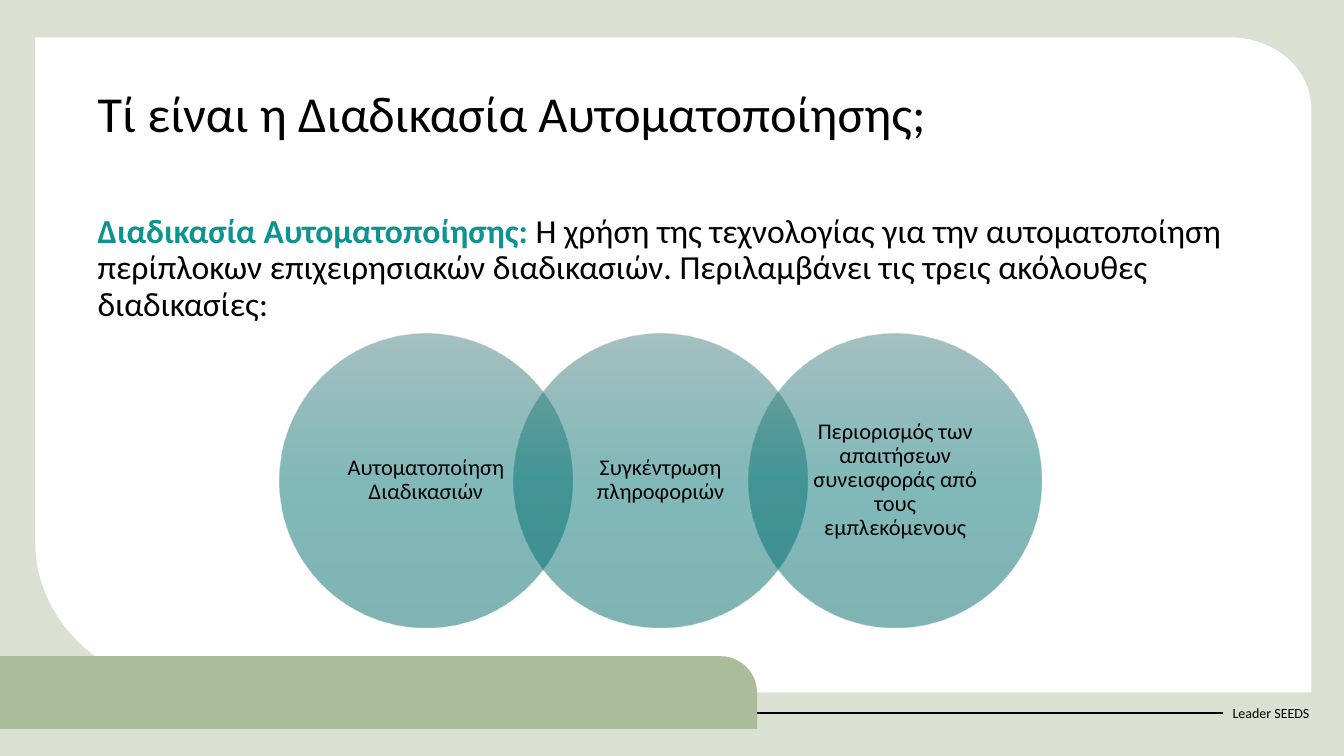
import copy
import math
from lxml import etree
from pptx import Presentation
from pptx import util as u
from pptx.dml.color import RGBColor
from pptx.enum import shapes, text
from pptx.oxml import ns

PALE = RGBColor(0xDA, 0xE0, 0xD2)
SAGE = RGBColor(0xAA, 0xBC, 0x99)
WHITE = RGBColor(0xFF, 0xFF, 0xFF)
BLACK = RGBColor(0, 0, 0)
TEAL = RGBColor(0x0D, 0x93, 0x90)
CIRCLE_STOPS = [
    (0, RGBColor(0x4B, 0x80, 0x81)),
    (0.5, RGBColor(0x03, 0x72, 0x73)),
    (1, RGBColor(0x00, 0x68, 0x69)),
]
CELL = u.Inches(0.1)
COLUMNS, ROWS = 133.33, 75

deck = Presentation()
deck.slide_width = int(COLUMNS * CELL)
deck.slide_height = int(ROWS * CELL)
page = deck.slides.add_slide(deck.slide_layouts[6])


def grid(*cells):
    return [int(cell * CELL) for cell in cells]


def add_text(area, spans, size, align=text.PP_ALIGN.LEFT,
             anchor=text.MSO_ANCHOR.TOP, spacing=0.9, inset=(1, 0.5)):
    box = page.shapes.add_textbox(*grid(*area))
    frame = box.text_frame
    frame.word_wrap = True
    frame.vertical_anchor = anchor
    frame.margin_left = frame.margin_right = int(inset[0] * CELL)
    frame.margin_top = frame.margin_bottom = int(inset[1] * CELL)
    para = frame.paragraphs[0]
    para.alignment = align
    para.line_spacing = spacing
    for words, color, bold in spans:
        span = para.add_run()
        span.text = words
        span.font.name = "Calibri"
        span.font.size = u.Pt(size)
        span.font.bold = bold
        span.font.color.rgb = color
    return box


backdrop = page.shapes.add_shape(
    shapes.MSO_SHAPE.RECTANGLE, 0, 0, deck.slide_width, deck.slide_height)

left, top, right, bottom = 3.5, 3.7, 130.1, 68.7
outline = [(left, top)]
for center_x, center_y, radius_x, radius_y, start in (
        (122, 10.8, 8.1, 7.1, -90), (20.5, 53.8, 17, 14.9, 90)):
    for degrees in range(start, start + 91, 3):
        angle = math.radians(degrees)
        outline.append((center_x + radius_x * math.cos(angle),
                        center_y + radius_y * math.sin(angle)))
    if start < 0:
        outline.append((right, bottom))
builder = page.shapes.build_freeform(*grid(*outline[0]))
builder.add_line_segments([grid(*point) for point in outline[1:]], close=True)
panel = builder.convert_to_shape()

footer = add_text((121.3, 68.7, 10.1, 4), [("Leader SEEDS", BLACK, False)], 10,
                  anchor=text.MSO_ANCHOR.MIDDLE, spacing=1)
rule = page.shapes.add_connector(
    shapes.MSO_CONNECTOR.STRAIGHT, *grid(0, 70.7, 121.3, 70.7))
rule.end_connect(footer, 1)
rule.line.color.rgb = BLACK
rule.line.width = u.Pt(1.5)
etree.SubElement(rule._element.spPr, ns.qn("a:effectLst"))

band = page.shapes.add_shape(
    shapes.MSO_SHAPE.ROUND_1_RECTANGLE, *grid(0, 65.1, 75.1, 7.2))
band.adjustments[0] = 0.5

for block, color in ((backdrop, PALE), (panel, WHITE), (band, SAGE)):
    block.shadow.inherit = False
    block.fill.solid()
    block.fill.fore_color.rgb = color
    block.line.fill.background()

add_text((8.7, 20.8, 115.9, 43.7), [
    ("Διαδικασία Αυτοματοποίησης: ", TEAL, True),
    ("Η χρήση της τεχνολογίας για την αυτοματοποίηση περίπλοκων επιχειρησιακών "
     "διαδικασιών. Περιλαμβάνει τις τρεις ακόλουθες διαδικασίες:", BLACK, False),
], 24)
add_text((8.7, 8.3, 115.9, 8.8),
         [("Τί είναι η Διαδικασία Αυτοματοποίησης;", BLACK, False)], 36)

diameter = 29.1
circle_top = 33.1
label_inset = 4.3
label_side = diameter - 2 * label_inset
processes = [
    "Αυτοματοποίηση Διαδικασιών",
    "Συγκέντρωση πληροφοριών",
    "Περιορισμός των απαιτήσεων συνεισφοράς από τους εμπλεκόμενους",
]
for index, process in enumerate(processes):
    circle_left = 27.7 + index * 0.8 * diameter
    circle = page.shapes.add_shape(
        shapes.MSO_SHAPE.OVAL,
        *grid(circle_left, circle_top, diameter, diameter))
    circle.shadow.inherit = False
    circle.line.fill.background()
    circle.fill.gradient()
    circle.fill.gradient_angle = 270
    stop_list = next(circle._element.spPr.iter(ns.qn("a:gsLst")))
    stop_list.append(copy.deepcopy(stop_list[0]))
    for stop, (position, color) in zip(circle.fill.gradient_stops, CIRCLE_STOPS):
        stop.position = position
        stop.color.rgb = color
    for color_element in stop_list.iter(ns.qn("a:srgbClr")):
        etree.SubElement(color_element, ns.qn("a:alpha"), val="50000")
    add_text((circle_left + label_inset, circle_top + label_inset,
              label_side, label_side),
             [(process, BLACK, False)], 16, align=text.PP_ALIGN.CENTER,
             anchor=text.MSO_ANCHOR.MIDDLE, inset=(1.6, 0.2))

deck.save("out.pptx")
